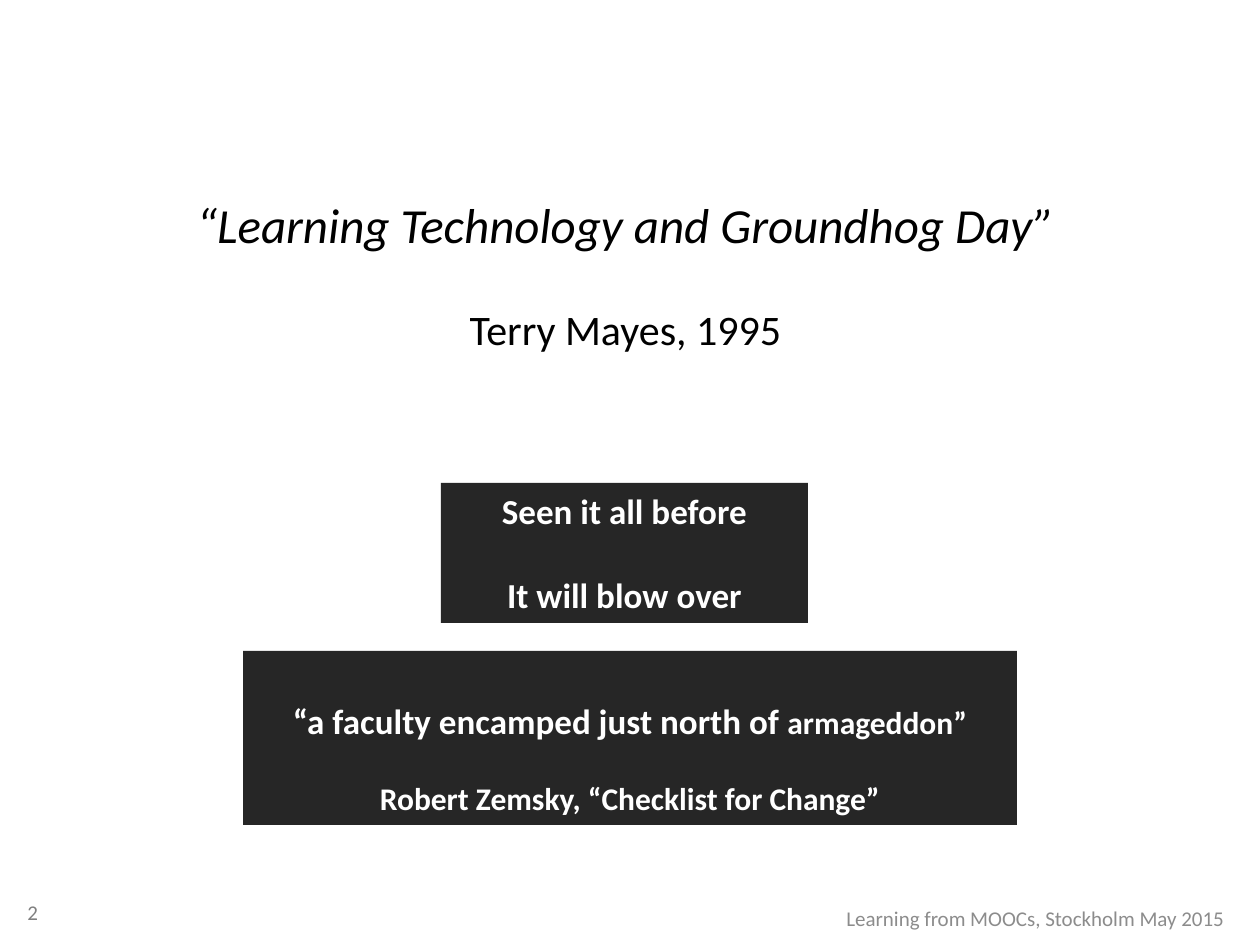
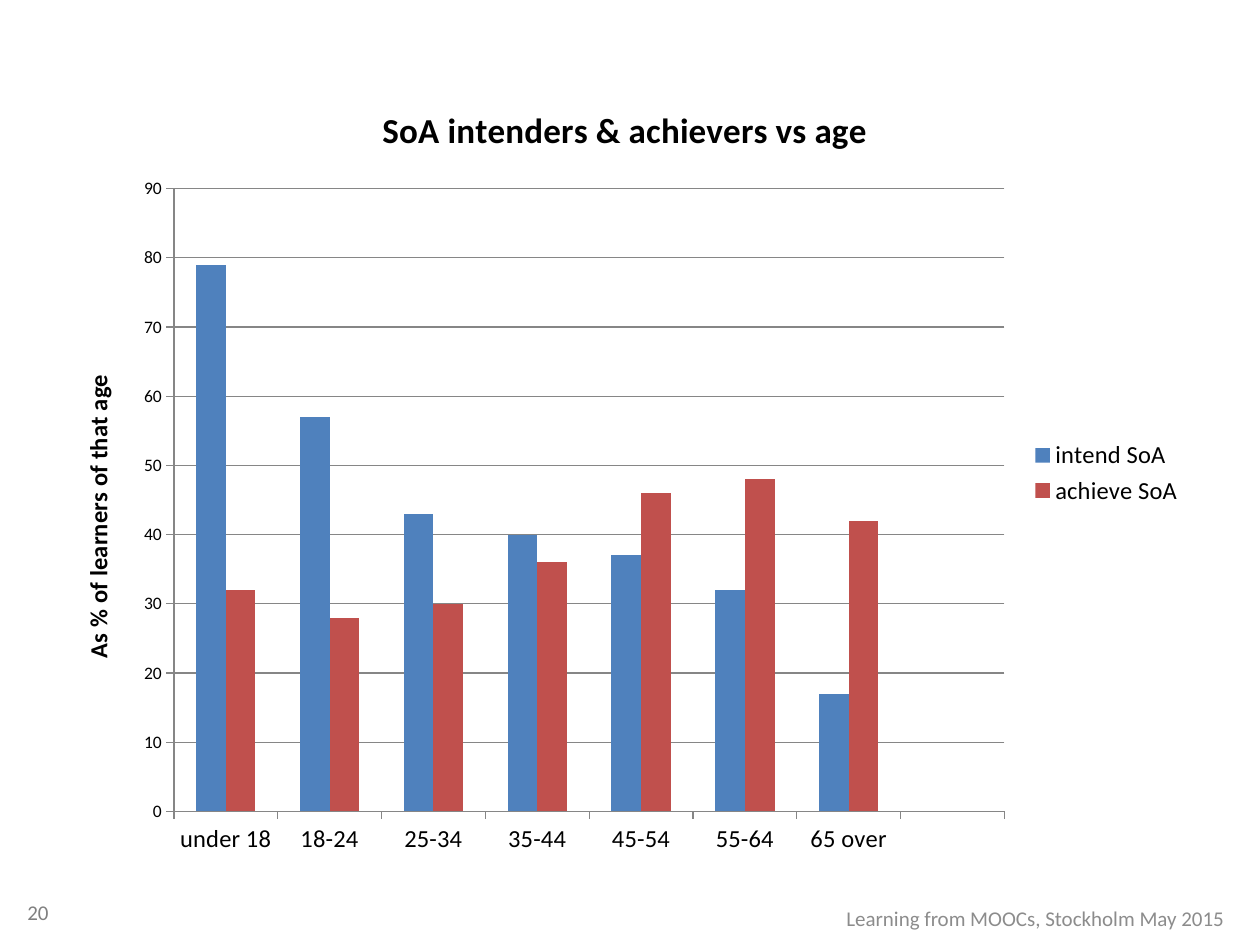
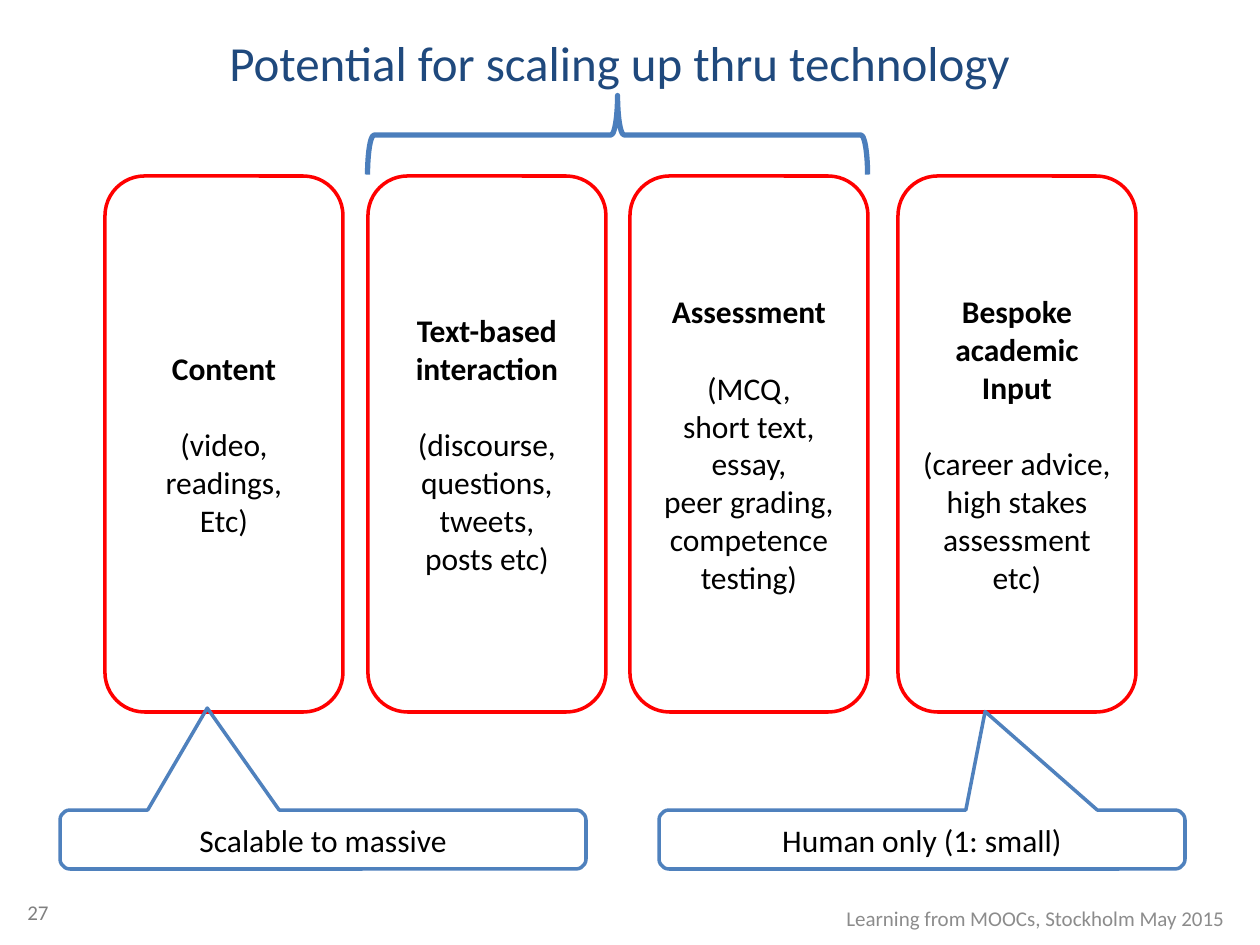
"""Build three slides on learning from MOOCs."""
import dataclasses

import pptx
import pptx.chart.data
import pptx.dml.color
import pptx.enum.chart
import pptx.enum.shapes
import pptx.enum.text
import pptx.shapes.autoshape
import pptx.slide
import pptx.text.text
import pptx.util

FONT = "Calibri"
BLACK, WHITE, DARK = "000000", "FFFFFF", "262626"
NAVY, BLUE, STEEL, BRICK, RED = "1F497D", "4F81BD", "4B7EBC", "C0504D", "FF0000"
GREY, SILVER, RULE = "808080", "8C8C8C", "868686"
FOOTER = "Learning from MOOCs, Stockholm May 2015"

ALIGN = pptx.enum.text.PP_ALIGN
ANCHOR = pptx.enum.text.MSO_ANCHOR
FORM = pptx.enum.shapes.MSO_SHAPE
BLANK, TITLED = 6, 5


@dataclasses.dataclass(frozen=True)
class Run:
    text: str
    size: int = 18
    color: str = BLACK
    bold: bool = False
    slant: bool = False


@dataclasses.dataclass(frozen=True)
class Para:
    runs: tuple[Run, ...]
    above: int = 0
    below: int = 0
    lines: float = 1.0
    align: ALIGN = ALIGN.CENTER


@dataclasses.dataclass(frozen=True)
class Box:
    left: int
    top: int
    width: int
    height: int


@dataclasses.dataclass(frozen=True)
class Look:
    form: FORM
    fill: str = ""
    line: str = ""
    weight: int = 2
    tweaks: tuple[float, ...] = ()
    turn: int = 0


@dataclasses.dataclass(frozen=True)
class Card:
    left: int
    heads: tuple[str, ...]
    notes: tuple[str, ...]


@dataclasses.dataclass(frozen=True)
class Call:
    left: int
    text: str
    tip: tuple[float, float]


CARDS = (
    Card(105, ("Content",), ("(video,", "readings,", "Etc)")),
    Card(368, ("Text-based interaction",), ("(discourse, questions, tweets,", "posts etc)")),
    Card(630, ("Assessment",),
         ("(MCQ,", "short text,", "essay,", "peer grading,", "competence testing)")),
    Card(898, ("Bespoke", "academic", "Input"),
         ("(career advice,", "high stakes assessment etc)")),
)
CALLS = (
    Call(60, "Scalable to massive", (-0.22, -2.23)),
    Call(659, "Human only (1: small)", (0.12, -2.17)),
)
AGES = ("under 18", "18-24", "25-34", "35-44", "45-54", "55-64", "65 over", "")
RATES = (
    ("intend SoA", BLUE, (79, 57, 43, 40, 37, 32, 17, None)),
    ("achieve SoA", BRICK, (32, 28, 30, 36, 46, 48, 42, None)),
)


def px(count: int) -> int:
    """Turn pixels into EMU."""
    return round(count * 914400 / 126)


def paint(code: str) -> pptx.dml.color.RGBColor:
    """Turn a hex string into a colour."""
    return pptx.dml.color.RGBColor.from_string(code)


def style(font: pptx.text.text.Font, size: int, color: str = BLACK,
          bold: bool = False, slant: bool = False) -> None:
    """Set every trait of a font."""
    font.name, font.size = FONT, pptx.util.Pt(size)
    font.bold, font.italic = bold, slant
    font.color.rgb = paint(color)


def write(frame: pptx.text.text.TextFrame, paras: list[Para],
          anchor: ANCHOR = ANCHOR.MIDDLE) -> None:
    """Fill a text frame run by run."""
    frame.word_wrap = True
    frame.auto_size = pptx.enum.text.MSO_AUTO_SIZE.NONE
    frame.vertical_anchor = anchor
    for i, para in enumerate(paras):
        item = frame.add_paragraph() if i else frame.paragraphs[0]
        item.alignment = para.align
        item.space_before = pptx.util.Pt(para.above)
        item.space_after = pptx.util.Pt(para.below)
        item.line_spacing = para.lines
        for run in para.runs:
            piece = item.add_run()
            piece.text = run.text
            style(piece.font, run.size, run.color, run.bold, run.slant)


def spots(box: Box) -> tuple[int, int, int, int]:
    """Give a box in EMU."""
    return px(box.left), px(box.top), px(box.width), px(box.height)


def label(slide: pptx.slide.Slide, box: Box, para: Para) -> None:
    """Add a line of text."""
    write(slide.shapes.add_textbox(*spots(box)).text_frame, [para])


def head(slide: pptx.slide.Slide, box: Box, paras: list[Para]) -> None:
    """Move and fill the title."""
    title = slide.shapes.title
    title.left, title.top, title.width, title.height = spots(box)
    write(title.text_frame, paras, ANCHOR.TOP)


def draw(slide: pptx.slide.Slide, box: Box, look: Look) -> pptx.shapes.autoshape.Shape:
    """Add a preset shape."""
    shape = slide.shapes.add_shape(look.form, *spots(box))
    shape.shadow.inherit = False
    shape.rotation = look.turn
    for i, tweak in enumerate(look.tweaks):
        shape.adjustments[i] = tweak
    if look.fill:
        shape.fill.solid()
        shape.fill.fore_color.rgb = paint(look.fill)
    else:
        shape.fill.background()
    if look.line:
        shape.line.color.rgb = paint(look.line)
        shape.line.width = pptx.util.Pt(look.weight)
    else:
        shape.line.fill.background()
    return shape


def start(deck: pptx.presentation.Presentation, layout: int, page: int) -> pptx.slide.Slide:
    """Add a slide with its number and footer."""
    slide = deck.slides.add_slide(deck.slide_layouts[layout])
    label(slide, Box(15, 895, 50, 34), Para((Run(str(page), 12, GREY),), align=ALIGN.LEFT))
    label(slide, Box(709, 900, 528, 36), Para((Run(FOOTER, 12, SILVER),), align=ALIGN.RIGHT))
    return slide


def quote(deck: pptx.presentation.Presentation) -> None:
    """Build the slide of quotes."""
    slide = start(deck, TITLED, 2)
    head(slide, Box(174, 188, 903, 224), [
        Para((Run("“Learning Technology and Groundhog Day”", 28, slant=True),)),
        Para((Run("Terry Mayes, 1995", 24),), above=29),
    ])
    look = Look(FORM.RECTANGLE, fill=DARK)
    views = [Para((Run(text, 20, WHITE, True),), 12, 12)
             for text in ("Seen it all before", "It will blow over")]
    write(draw(slide, Box(441, 483, 367, 140), look).text_frame, views, ANCHOR.TOP)
    write(draw(slide, Box(243, 651, 774, 174), look).text_frame, [
        Para((Run("“a faculty encamped just north of ", 20, WHITE, True),
              Run("armageddon”", 18, WHITE, True)), lines=2.0),
        Para((Run("Robert Zemsky, “Checklist for Change”", 18, WHITE, True),), lines=2.0),
    ], ANCHOR.TOP)


def graph(deck: pptx.presentation.Presentation) -> None:
    """Build the chart slide."""
    slide = start(deck, BLANK, 20)
    data = pptx.chart.data.CategoryChartData()
    data.categories = AGES
    for name, _, rates in RATES:
        data.add_series(name, rates)
    kind = pptx.enum.chart.XL_CHART_TYPE.COLUMN_CLUSTERED
    chart = slide.shapes.add_chart(kind, *spots(Box(54, 76, 1142, 794)), data).chart
    style(chart.font, 10)
    chart.has_title = True
    ages, scale = chart.category_axis, chart.value_axis
    for frame, text, size in (
        (chart.chart_title.text_frame, "SoA intenders & achievers vs age", 20),
        (scale.axis_title.text_frame, "As % of learners of that age", 14),
    ):
        run = frame.paragraphs[0].add_run()
        run.text = text
        style(run.font, size, bold=True)
    chart.has_legend = True
    chart.legend.position = pptx.enum.chart.XL_LEGEND_POSITION.RIGHT
    chart.legend.include_in_layout = False
    style(chart.legend.font, 14)
    style(ages.tick_labels.font, 14)
    scale.minimum_scale, scale.maximum_scale, scale.major_unit = 0, 90, 10
    scale.has_major_gridlines = True
    for part in (ages, scale, scale.major_gridlines):
        part.format.line.color.rgb = paint(RULE)
        part.format.line.width = pptx.util.Pt(0.75)
    for axis in (ages, scale):
        axis.major_tick_mark = pptx.enum.chart.XL_TICK_MARK.OUTSIDE
    plot = chart.plots[0]
    plot.gap_width, plot.overlap, plot.vary_by_categories = 150, 0, False
    for series, (_, color, _) in zip(plot.series, RATES):
        series.format.fill.solid()
        series.format.fill.fore_color.rgb = paint(color)


def model(deck: pptx.presentation.Presentation) -> None:
    """Build the slide on scaling up."""
    slide = start(deck, TITLED, 27)
    head(slide, Box(203, 26, 833, 72),
         [Para((Run("Potential for scaling up thru technology", 28, NAVY),))])
    for card in CARDS:
        shape = draw(slide, Box(card.left, 176, 238, 536),
                     Look(FORM.ROUNDED_RECTANGLE, line=RED))
        heads = [Para((Run(text, bold=True),)) for text in card.heads]
        notes = [Para((Run(text),), above=0 if i else 22)
                 for i, text in enumerate(card.notes)]
        write(shape.text_frame, heads + notes)
    for call in CALLS:
        look = Look(FORM.ROUNDED_RECTANGULAR_CALLOUT, line=BLUE, tweaks=(*call.tip, 0.17))
        shape = draw(slide, Box(call.left, 810, 526, 59), look)
        write(shape.text_frame, [Para((Run(call.text),))])
    draw(slide, Box(578, -115, 79, 500), Look(FORM.LEFT_BRACE, line=STEEL, weight=3, turn=90))


def main() -> None:
    """Build and save the deck."""
    deck = pptx.Presentation()
    deck.slide_width, deck.slide_height = px(1260), px(945)
    for build in (quote, graph, model):
        build(deck)
    deck.save("out.pptx")


if __name__ == "__main__":
    main()
